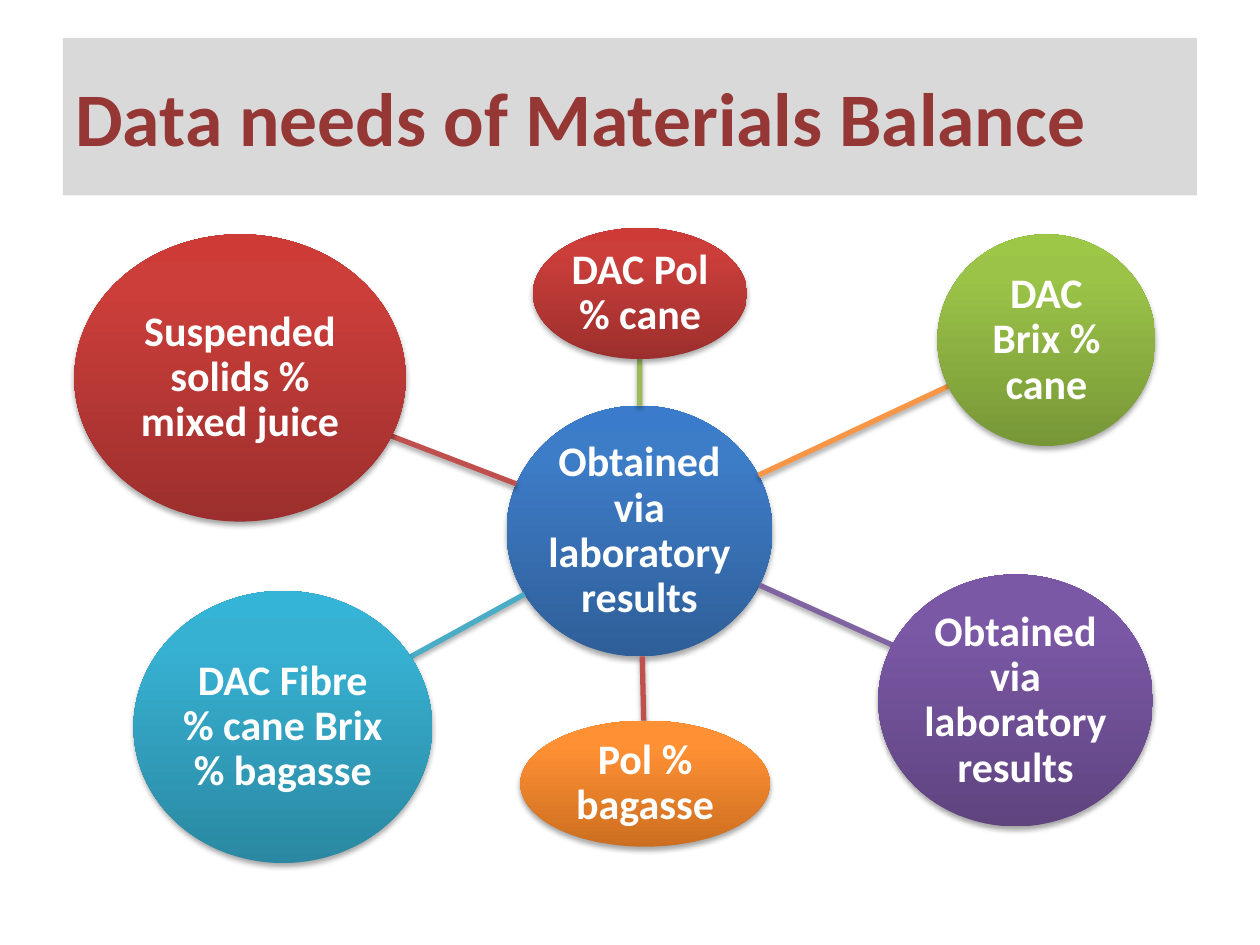
from math import hypot
from pptx import Presentation
from pptx.dml.color import RGBColor
from pptx.enum import shapes, text
from pptx.oxml import parse_xml
from pptx.oxml.ns import nsdecls, qn
from pptx.util import Inches, Pt

TITLE = "Data needs of Materials Balance"
BLUE = ("2F5F99", "3D7CC7", "3A7CCB")
RED = ("9C2F2D", "CB3E3A", "CE3B37")
GREEN = ("779737", "9BC348", "9DC746")
PURPLE = ("5F4480", "7B58A6", "7C57A8")
TEAL = ("2A88A2", "37B1D2", "34B4D6")
ORANGE = ("CC6E20", "FF9034", "FF9136")
HUB = ("Obtained via laboratory results", (4.02, 3.22, 2.11, 1.99), BLUE)
NODES = [
    ("DAC Pol % cane", (4.23, 1.81, 1.7, 1.04), RED, "9BBB59"),
    ("DAC Brix % cane", (7.44, 1.86, 1.73, 1.68), GREEN, "F79646"),
    ("Obtained via laboratory results", (6.97, 4.56, 2.18, 2), PURPLE, "8064A2"),
    ("DAC Fibre % cane Brix % bagasse", (1.06, 4.69, 2.37, 2.16), TEAL, "4BACC6"),
    ("Pol % bagasse", (4.13, 5.72, 1.98, 1), ORANGE, "C0504D"),
    ("Suspended solids % mixed juice", (0.59, 1.86, 2.63, 2.28), RED, "C0504D"),
]


def color(code):
    return RGBColor.from_string(code)


def style(frame, size, code):
    frame.word_wrap = True
    frame.vertical_anchor = text.MSO_ANCHOR.MIDDLE
    font = frame.paragraphs[0].runs[0].font
    font.name, font.size, font.bold = "Calibri", Pt(size), True
    font.color.rgb = color(code)


def shade(item):
    props = item._element.spPr
    for old in props.findall(qn("a:effectLst")):
        props.remove(old)
    props.append(parse_xml(
        f'<a:effectLst {nsdecls("a")}><a:outerShdw blurRad="{Pt(3.1)}" '
        f'dist="{Pt(1.8)}" dir="5400000" rotWithShape="0"><a:srgbClr val="000000">'
        '<a:alpha val="35000"/></a:srgbClr></a:outerShdw></a:effectLst>'))


def blend(item, codes):
    item.fill.gradient()
    item.fill.gradient_angle = 90
    stops = item._element.spPr.find(".//" + qn("a:gsLst"))
    for old in list(stops):
        stops.remove(old)
    for spot, code in zip((0, 80, 100), codes):
        stops.append(parse_xml(
            f'<a:gs {nsdecls("a")} pos="{spot * 1000}">'
            f'<a:srgbClr val="{code}"/></a:gs>'))


def bubble(slide, label, box, codes):
    oval = slide.shapes.add_shape(shapes.MSO_SHAPE.OVAL, *map(Inches, box))
    blend(oval, codes)
    oval.line.fill.background()
    shade(oval)
    frame = oval.text_frame
    frame.text = label
    frame.margin_left = frame.margin_right = Inches(0.02)
    frame.margin_top = frame.margin_bottom = Inches(0.02)
    para = frame.paragraphs[0]
    para.alignment = text.PP_ALIGN.CENTER
    para.line_spacing = 0.9
    style(frame, 24, "FFFFFF")


def center(box):
    left, top, width, height = box
    return left + width / 2, top + height / 2


def edge(box, goal):
    x, y = center(box)
    dx, dy = goal[0] - x, goal[1] - y
    part = 1 / hypot(2 * dx / box[2], 2 * dy / box[3])
    return x + dx * part, y + dy * part


def spoke(slide, hub, box, code):
    ends = edge(hub, center(box)) + edge(box, center(hub))
    line = slide.shapes.add_connector(
        shapes.MSO_CONNECTOR.STRAIGHT, *map(Inches, ends))
    line.line.color.rgb = color(code)
    line.line.width = Pt(3)
    shade(line)


def main():
    deck = Presentation()
    deck.slide_width, deck.slide_height = Inches(10), Inches(7.5)
    slide = deck.slides.add_slide(deck.slide_layouts[6])

    banner = slide.shapes.add_textbox(*map(Inches, (0.5, 0.3, 9, 1.25)))
    banner.fill.solid()
    banner.fill.fore_color.rgb = color("D9D9D9")
    banner.text_frame.text = TITLE
    style(banner.text_frame, 43.2, "953735")

    bubble(slide, *HUB)
    for label, box, codes, code in NODES:
        spoke(slide, HUB[1], box, code)
        bubble(slide, label, box, codes)
    deck.save("out.pptx")


if __name__ == "__main__":
    main()
